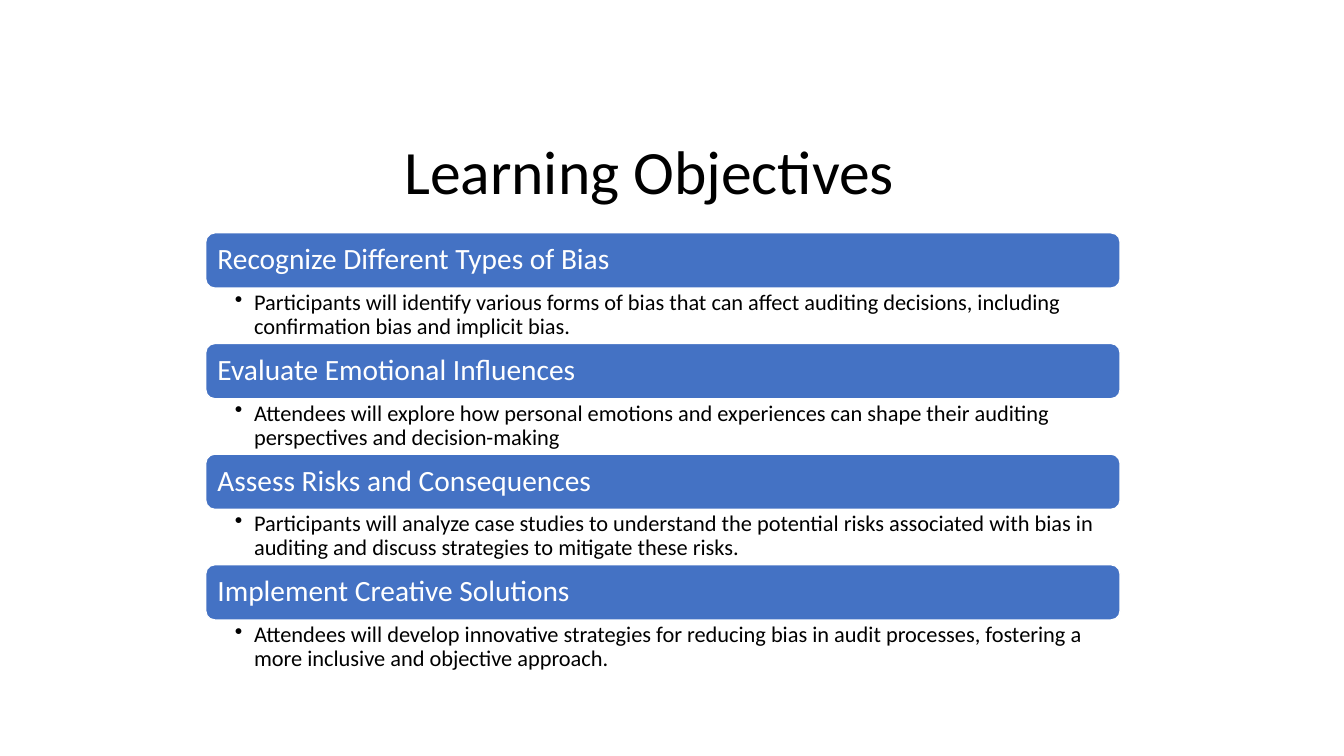
from lxml.etree import SubElement as Sub
from pptx import Presentation
from pptx.dml.color import RGBColor as Rgb
from pptx.enum.shapes import MSO_SHAPE as Kind
from pptx.enum.text import MSO_ANCHOR as Anchor, PP_ALIGN as Align
from pptx.oxml.ns import qn
from pptx.util import Inches as In, Pt

# Grid: each goal takes one bar row and one note row
LEFT, WIDE = 2.04, 9.07
TOP, END = 2.31, 6.7
GOALS = [
    ("Recognize Different Types of Bias",
     "Participants will identify various forms of bias that can affect "
     "auditing decisions, including confirmation bias and implicit bias."),
    ("Evaluate Emotional Influences",
     "Attendees will explore how personal emotions and experiences can "
     "shape their auditing perspectives and decision-making"),
    ("Assess Risks and Consequences",
     "Participants will analyze case studies to understand the potential "
     "risks associated with bias in auditing and discuss strategies to "
     "mitigate these risks."),
    ("Implement Creative Solutions",
     "Attendees will develop innovative strategies for reducing bias in "
     "audit processes, fostering a more inclusive and objective approach."),
]
ROW = (END - TOP) / (2 * len(GOALS))

# Text formats: insets run left, top, right, bottom
TITLE = dict(size=44, color="000000", pad=(0.1, 0.05, 0.1, 0.05), anchor=Anchor.TOP)
HEAD = dict(size=21, color="FFFFFF", pad=(0.09,) * 4, anchor=Anchor.MIDDLE)
NOTE = dict(size=16, color="000000", pad=(0.29, 0.03, 0.16, 0.03), anchor=Anchor.TOP)


def paint(fmt, code):
    if hasattr(fmt, "solid"):
        fmt.solid()
        fmt = fmt.fore_color
    fmt.rgb = Rgb.from_string(code)


def write(shape, text, look):
    frame = shape.text_frame
    sides = ("margin_left", "margin_top", "margin_right", "margin_bottom")
    fit = dict(zip(sides, map(In, look["pad"])))
    fit |= dict(word_wrap=True, vertical_anchor=look["anchor"])
    para = frame.paragraphs[0]
    run = para.add_run()
    jobs = [
        (frame, fit),
        (para, dict(alignment=Align.LEFT, line_spacing=0.9)),
        (run, dict(text=text)),
        (run.font, dict(name="Calibri", size=Pt(look["size"]))),
    ]
    for item, values in jobs:
        for key, value in values.items():
            setattr(item, key, value)
    paint(run.font.color, look["color"])
    return para


deck = Presentation()
deck.slide_width, deck.slide_height = In(13.33), In(7.5)
slide = deck.slides.add_slide(deck.slide_layouts[6])
paint(slide.background.fill, "FFFFFF")
shapes = slide.shapes

# Title
title = shapes.add_textbox(In(3.91), In(1.35), In(5.51), In(0.78))
write(title, "Learning Objectives", TITLE)

for i, (head, note) in enumerate(GOALS):
    top = TOP + 2 * i * ROW

    # Heading bar
    bar = shapes.add_shape(Kind.ROUNDED_RECTANGLE, In(LEFT), In(top), In(WIDE), In(ROW))
    bar.shadow.inherit = False
    paint(bar.fill, "4472C4")
    paint(bar.line.fill, "FFFFFF")
    bar.line.width = Pt(1)
    write(bar, head, HEAD)

    # Bulleted note below the bar
    box = shapes.add_textbox(In(LEFT), In(top + ROW), In(WIDE), In(ROW))
    para = write(box, note, NOTE)
    para.level = 1
    props = para._p.get_or_add_pPr()
    for key, value in dict(marL=In(0.19), indent=-In(0.19)).items():
        props.set(key, str(value))
    Sub(props, qn("a:buChar"), char="•")

deck.save("out.pptx")
